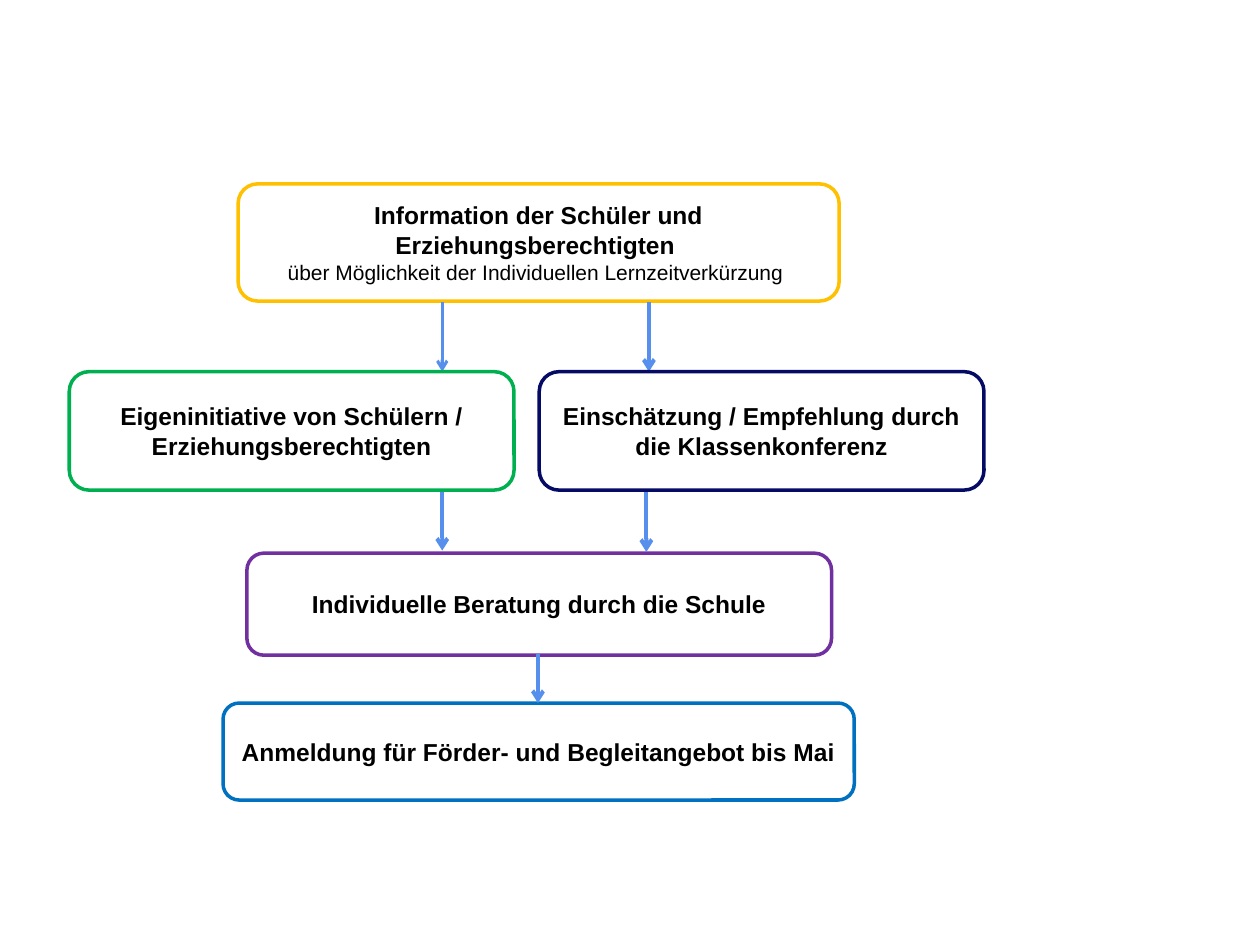
from lxml import etree
from pptx import Presentation
from pptx.dml.color import RGBColor
from pptx.enum.shapes import MSO_CONNECTOR, MSO_SHAPE
from pptx.enum.text import MSO_ANCHOR, PP_ALIGN
from pptx.oxml.ns import qn
from pptx.util import Inches, Pt

ROUNDED = MSO_SHAPE.ROUNDED_RECTANGLE
STRAIGHT = MSO_CONNECTOR.STRAIGHT
MIDDLE = MSO_ANCHOR.MIDDLE
CENTER = PP_ALIGN.CENTER

WHITE = RGBColor(0xFF, 0xFF, 0xFF)
BLACK = RGBColor(0x00, 0x00, 0x00)
YELLOW = RGBColor(0xFF, 0xC0, 0x00)
GREEN = RGBColor(0x00, 0xB0, 0x50)
NAVY = RGBColor(0x05, 0x0A, 0x64)
PURPLE = RGBColor(0x70, 0x30, 0xA0)
BLUE = RGBColor(0x00, 0x70, 0xC0)
ARROW_BLUE = RGBColor(0x56, 0x8F, 0xEC)

SLIDE_W, SLIDE_H = Inches(10), Inches(7.5)
COL, ROW = SLIDE_W / 100, SLIDE_H / 75

HEADING = {"size": Pt(14), "bold": True, "name": "Arial"}
DETAIL = {"size": Pt(12), "bold": False, "name": "Arial"}

FLOW_ORIGIN = (5.5, 14.6)
MIDDLE_AXIS = 37.3
PAIR_TOP, PAIR_W, PAIR_H = 14.9, 35.3, 9.4

OUTER_STEPS = [
    ((MIDDLE_AXIS - 23.9, 0, 47.7, 9.3), YELLOW, [
        ("Information der Schüler und Erziehungsberechtigten ", HEADING),
        ("über Möglichkeit der Individuellen Lernzeitverkürzung ", DETAIL)]),
    ((MIDDLE_AXIS - 23.2, 29.3, 46.4, 8.1), PURPLE, [
        ("Individuelle Beratung durch die Schule", HEADING)]),
    ((MIDDLE_AXIS - 25.1, 41.2, 50.1, 7.7), BLUE, [
        ("Anmeldung für Förder- und Begleitangebot bis Mai", HEADING)]),
]
PAIR_STEPS = [
    ((0, PAIR_TOP, PAIR_W, PAIR_H), GREEN, [
        ("Eigeninitiative von Schülern / Erziehungsberechtigten", HEADING)]),
    ((MIDDLE_AXIS, PAIR_TOP, PAIR_W, PAIR_H), NAVY, [
        ("Einschätzung / Empfehlung durch die Klassenkonferenz", HEADING)]),
]
ARROWS = [
    (46, 9.4, PAIR_TOP, 2.25),
    (29.6, 9.4, PAIR_TOP, 1.75),
    (29.6, 22.5, 29.1, 2.25),
    (45.8, 22.6, 29.2, 2.25),
    (37.2, 37.3, 41.2, 2.25),
]


def add_step(slide, origin, box, color, lines):
    """Place a rounded step with centred text, relative to the origin."""
    x, y, w, h = box
    sp = slide.shapes.add_shape(
        ROUNDED, round((origin[0] + x) * COL), round((origin[1] + y) * ROW),
        round(w * COL), round(h * ROW))
    sp.shadow.inherit = False
    sp.fill.solid()
    sp.fill.fore_color.rgb = WHITE
    sp.line.color.rgb = color
    sp.line.width = Pt(2)
    tf = sp.text_frame
    tf.word_wrap = True
    tf.vertical_anchor = MIDDLE
    for i, (text, style) in enumerate(lines):
        p = tf.add_paragraph() if i else tf.paragraphs[0]
        p.alignment = CENTER
        r = p.add_run()
        r.text = text
        r.font.color.rgb = BLACK
        for key, value in style.items():
            setattr(r.font, key, value)


def add_arrow(slide, origin, x, top, bottom, width):
    """Draw a downward arrow relative to the origin."""
    left = round((origin[0] + x) * COL)
    start, end = (round((origin[1] + y) * ROW) for y in (top, bottom))
    cxn = slide.shapes.add_connector(STRAIGHT, left, start, left, end)
    cxn.line.color.rgb = ARROW_BLUE
    cxn.line.width = Pt(width)
    etree.SubElement(cxn.line._get_or_add_ln(), qn("a:tailEnd"), type="arrow")
    etree.SubElement(cxn._element.spPr, qn("a:effectLst"))


def add_flow(slide, origin):
    """Build the flow chart, with the paired steps above the arrows."""
    for step in OUTER_STEPS:
        add_step(slide, origin, *step)
    for arrow in ARROWS:
        add_arrow(slide, origin, *arrow)
    for step in PAIR_STEPS:
        add_step(slide, origin, *step)


def main():
    """Create the presentation and save it."""
    prs = Presentation()
    prs.slide_width, prs.slide_height = SLIDE_W, SLIDE_H
    slide = prs.slides.add_slide(prs.slide_layouts[6])
    add_flow(slide, FLOW_ORIGIN)
    prs.save("out.pptx")


if __name__ == "__main__":
    main()
